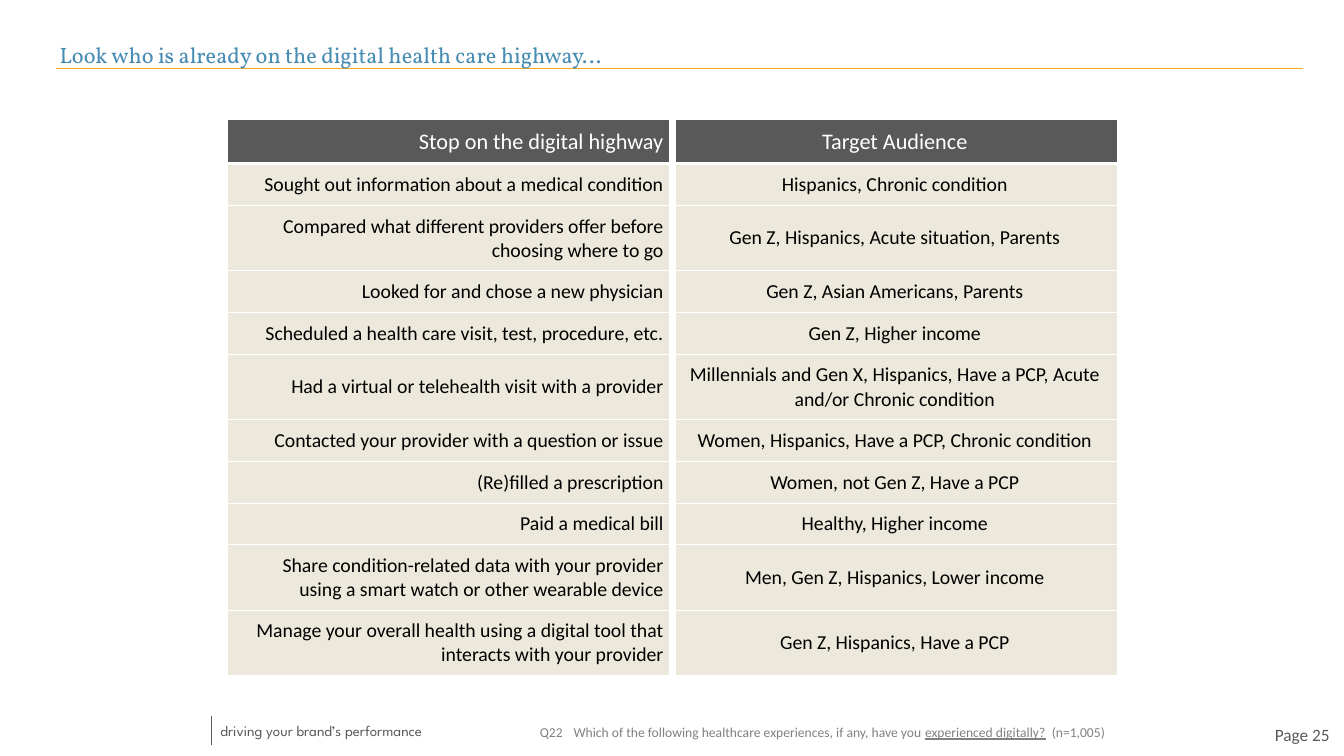
from lxml import etree
from pptx import Presentation
from pptx.dml.color import RGBColor
from pptx.enum import shapes, text
from pptx.oxml import ns
from pptx.util import Inches, Pt

# Content
TITLE = "Look who is already on the digital health care highway…"
TAGLINE = "driving your brand’s performance"
PAGE = "Page 25"
QUESTION = [
    ("Q22\tWhich of the following healthcare experiences, if any, have you ", False),
    ("experienced digitally?", True),
    ("  (n=1,005)", False),
]
HEADER = ("Stop on the digital highway", "Target Audience")
# Stop, audience, lines of text in the row
STOPS = [
    ("Sought out information about a medical condition", "Hispanics, Chronic condition", 1),
    ("Compared what different providers offer before choosing where to go",
     "Gen Z, Hispanics, Acute situation, Parents", 2),
    ("Looked for and chose a new physician", "Gen Z, Asian Americans, Parents", 1),
    ("Scheduled a health care visit, test, procedure, etc.", "Gen Z, Higher income", 1),
    ("Had a virtual or telehealth visit with a provider",
     "Millennials and Gen X, Hispanics, Have a PCP, Acute and/or Chronic condition", 2),
    ("Contacted your provider with a question or issue",
     "Women, Hispanics, Have a PCP, Chronic condition", 1),
    ("(Re)filled a prescription", "Women, not Gen Z, Have a PCP", 1),
    ("Paid a medical bill", "Healthy, Higher income", 1),
    ("Share condition-related data with your provider using a smart watch or other wearable device",
     "Men, Gen Z, Hispanics, Lower income", 2),
    ("Manage your overall health using a digital tool that interacts with your provider",
     "Gen Z, Hispanics, Have a PCP", 2),
]

# Style
WHITE = RGBColor(0xFF, 0xFF, 0xFF)
BLACK = RGBColor(0x00, 0x00, 0x00)
DARK = RGBColor(0x59, 0x59, 0x59)
GRAY = RGBColor(0x80, 0x80, 0x80)
BLUE = RGBColor(0x47, 0x8C, 0xB2)
ORANGE = RGBColor(0xFA, 0xAB, 0x1C)
SAND = RGBColor(0xDB, 0xD4, 0xBA)
LEFT, CENTER, RIGHT = text.PP_ALIGN.LEFT, text.PP_ALIGN.CENTER, text.PP_ALIGN.RIGHT
TOP, MIDDLE, BOTTOM = text.MSO_ANCHOR.TOP, text.MSO_ANCHOR.MIDDLE, text.MSO_ANCHOR.BOTTOM
HEADER_H = 0.49
ROW_H = {1: 0.47, 2: 0.73}
COL_W = 5


def write(tf, runs, size, color, font="Calibri", align=LEFT):
    """Fill the first paragraph with a string or (text, underlined) runs."""
    p = tf.paragraphs[0]
    p.alignment = align
    for words, underline in [(runs, False)] if isinstance(runs, str) else runs:
        r = p.add_run()
        r.text = words
        r.font.size, r.font.name = Pt(size), font
        r.font.color.rgb = color
        r.font.underline = underline
    return p


def add_text(s, box, runs, size, color, anchor=TOP, inset=(0.1, 0.05), wrap=True, **fmt):
    tf = s.shapes.add_textbox(*map(Inches, box)).text_frame
    tf.word_wrap = wrap
    tf.vertical_anchor = anchor
    tf.margin_left = tf.margin_right = Inches(inset[0])
    tf.margin_top = tf.margin_bottom = Inches(inset[1])
    return write(tf, runs, size, color, **fmt)


def add_line(s, x1, y1, x2, y2, color, width):
    line = s.shapes.add_connector(shapes.MSO_CONNECTOR.STRAIGHT,
                                  *map(Inches, (x1, y1, x2, y2)))
    line.line.color.rgb = color
    line.line.width = Pt(width)
    etree.SubElement(line._element.spPr, ns.qn("a:effectLst"))


def fill_cell(cell, color, alpha=None):
    cell.fill.solid()
    cell.fill.fore_color.rgb = color
    if alpha:
        clr = cell._tc.tcPr.find(".//" + ns.qn("a:srgbClr"))
        etree.SubElement(clr, ns.qn("a:alpha"), val=str(alpha * 1000))


def add_borders(cell, **widths):
    for i, side in enumerate("LRTB"):
        ln = etree.Element(ns.qn("a:ln" + side), w=str(Pt(widths[side])))
        fill = etree.SubElement(ln, ns.qn("a:solidFill"))
        etree.SubElement(fill, ns.qn("a:srgbClr"), val=str(WHITE))
        cell._tc.tcPr.insert(i, ln)


prs = Presentation()
prs.slide_width, prs.slide_height = Inches(15.11), Inches(8.5)
s = prs.slides.add_slide(prs.slide_layouts[6])

# Title rule and footer tagline
add_line(s, 14.65, 0.77, 0.63, 0.77, ORANGE, 1)
add_text(s, (2.38, 8.06, 2.95, 0.3), TAGLINE, 12, DARK, font="League Spartan", wrap=False)
add_line(s, 2.38, 8.05, 2.38, 8.38, DARK, 0.75)

# Table of stops and audiences
heights = [HEADER_H] + [ROW_H[lines] for *_, lines in STOPS]
table = s.shapes.add_table(len(heights), 2, Inches(2.56), Inches(1.34),
                           Inches(2 * COL_W), Inches(sum(heights))).table
for col in table.columns:
    col.width = Inches(COL_W)
for i, (labels, height) in enumerate(zip([HEADER] + [row[:2] for row in STOPS], heights)):
    table.rows[i].height = Inches(height)
    head = i == 0
    for j, label in enumerate(labels):
        cell = table.cell(i, j)
        cell.margin_left = cell.margin_right = Inches(0.1)
        cell.margin_top = cell.margin_bottom = Inches(0.1)
        cell.vertical_anchor = TOP if head else MIDDLE
        write(cell.text_frame, label, 18 if head else 16, WHITE if head else BLACK,
              align=CENTER if j else RIGHT)
        fill_cell(cell, DARK if head else SAND, None if head else 50)
        add_borders(cell, L=6 if j else 1, R=1 if j else 6, T=1, B=3 if head else 1)

# Page number, title and survey question
add_text(s, (13.75, 8.1, 1.31, 0.33), PAGE, 14, DARK, anchor=MIDDLE,
         inset=(0.11, 0.06), align=RIGHT)
add_text(s, (0.56, 0.37, 14.08, 0.45), TITLE, 18, BLUE, anchor=BOTTOM,
         inset=(0.11, 0.06), font="Vollkorn")
p = add_text(s, (5.97, 8.09, 7.55, 0.29), QUESTION, 11, GRAY)
pPr = p._p.get_or_add_pPr()
pPr.set("marL", str(Inches(0.38)))
pPr.set("indent", str(-Inches(0.38)))

prs.save("out.pptx")
